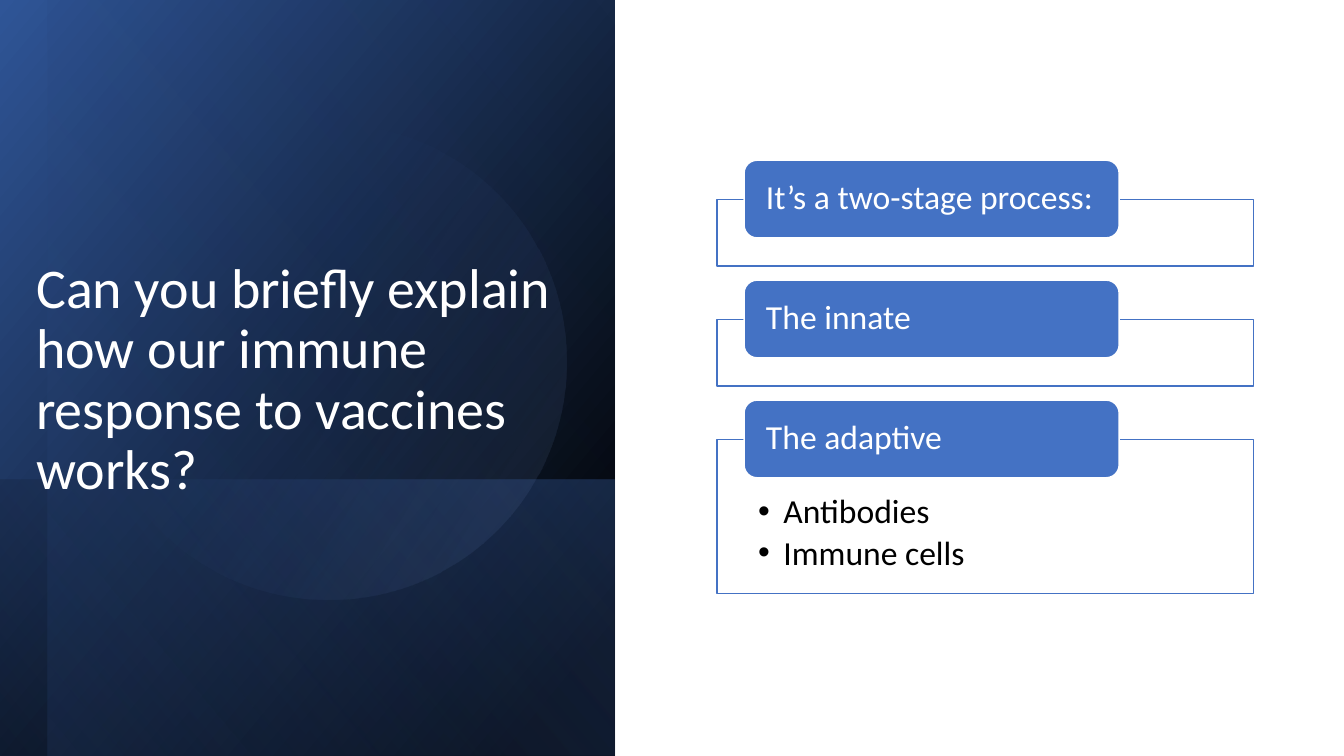
from dataclasses import dataclass

from lxml import etree
from pptx import Presentation
from pptx.dml.color import RGBColor
from pptx.enum.shapes import MSO_SHAPE
from pptx.enum.text import MSO_ANCHOR, MSO_AUTO_SIZE, PP_ALIGN
from pptx.oxml.ns import qn
from pptx.util import Inches, Pt

RECT = MSO_SHAPE.RECTANGLE
OVAL = MSO_SHAPE.OVAL
ROUND = MSO_SHAPE.ROUNDED_RECTANGLE
LEFT = PP_ALIGN.LEFT
TOP, MIDDLE = MSO_ANCHOR.TOP, MSO_ANCHOR.MIDDLE
NO_FIT = MSO_AUTO_SIZE.NONE

Box = tuple[float, float, float, float]


@dataclass(frozen=True)
class Theme:
    font: str = "Calibri"
    title: float = 40
    body: float = 24
    line: float = 1
    blue: str = "4472C4"
    navy: str = "2F5597"
    pale: str = "8FAADC"
    black: str = "000000"
    white: str = "FFFFFF"


THEME = Theme()


@dataclass(frozen=True)
class Stop:
    place: float
    color: str
    alpha: int = 100


@dataclass(frozen=True)
class Panel:
    kind: int
    box: Box
    turn: float
    angle: float
    stops: tuple[Stop, Stop]
    flip: bool = True


@dataclass(frozen=True)
class Stage:
    label: str
    height: float = 0.66
    items: tuple[str, ...] = ()


PANELS = (
    Panel(RECT, (-0.7, 0.7, 7.5, 6.1), 90, 50,
          (Stop(0.08, THEME.black), Stop(1, THEME.navy))),
    Panel(RECT, (1.67, 3.08, 2.74, 6.1), 90, 130,
          (Stop(0.02, THEME.blue, 29), Stop(1, THEME.black, 30))),
    Panel(RECT, (-0.46, 0.93, 7.5, 5.63), 90, 130,
          (Stop(0, THEME.black, 0), Stop(0.99, THEME.blue, 11))),
    Panel(OVAL, (0.9, 1.23, 4.72, 4.72), 101.6, 290,
          (Stop(0.39, THEME.blue, 0), Stop(1, THEME.pale, 15)), flip=False),
)

STAGES = (
    Stage("It’s a two-stage process:"),
    Stage("The innate"),
    Stage("The adaptive", 1.53, ("Antibodies", "Immune cells")),
)
FRAME_X, FRAME_Y, FRAME_W, STEP = 7.11, 1.98, 5.32, 1.19
TAG_X, TAG_W, TAG_H, TAG_RISE = 7.38, 3.72, 0.77, 0.39


def rgb(color: str) -> RGBColor:
    return RGBColor.from_string(color)


def fade(node, alpha: int) -> None:
    """Set the opacity, in percent, of a colour element."""
    etree.SubElement(node, qn("a:alpha")).set("val", str(alpha * 1000))


def add(slide, kind: int, box: Box):
    shape = slide.shapes.add_shape(kind, *map(Inches, box))
    shape.shadow.inherit = False
    return shape


def solid(shape, fill: str, line: str) -> None:
    shape.fill.solid()
    shape.fill.fore_color.rgb = rgb(fill)
    shape.line.color.rgb = rgb(line)
    shape.line.width = Pt(THEME.line)


def place(slide, holder, box: Box) -> None:
    """Move a placeholder to its box, in front of what is drawn so far."""
    holder.left, holder.top, holder.width, holder.height = map(Inches, box)
    slide.shapes._spTree.append(holder._element)


def write(shape, lines: tuple[str, ...], size: float, color: str,
          anchor: int, pad: Box, bullet: bool = False) -> None:
    frame = shape.text_frame
    frame.word_wrap = True
    frame.auto_size = NO_FIT
    frame.vertical_anchor = anchor
    (frame.margin_left, frame.margin_top,
     frame.margin_right, frame.margin_bottom) = map(Inches, pad)
    frame.text = "\n".join(lines)
    for para in frame.paragraphs:
        para.alignment = LEFT
        para.line_spacing = 0.9
        para.space_before = Pt(0)
        if bullet:
            para.space_after = Pt(0.15 * size)
            props = para._p.get_or_add_pPr()
            props.set("marL", str(Inches(0.25)))
            props.set("indent", str(Inches(-0.25)))
            etree.SubElement(props, qn("a:buChar")).set("char", "•")
        para.font.name = THEME.font
        para.font.size = Pt(size)
        para.font.color.rgb = rgb(color)


def draw_panel(slide, panel: Panel) -> None:
    shape = add(slide, panel.kind, panel.box)
    shape.rotation = panel.turn
    shape.line.fill.background()
    shape.fill.gradient()
    shape.fill.gradient_angle = 360 - panel.angle
    for grade, stop in zip(shape.fill.gradient_stops, panel.stops):
        grade.position = stop.place
        grade.color.rgb = rgb(stop.color)
    props = shape._element.spPr
    for node, stop in zip(props.iter(qn("a:srgbClr")), panel.stops):
        fade(node, stop.alpha)
    if panel.flip:
        props.find(qn("a:xfrm")).set("flipH", "1")


def draw_stage(slide, stage: Stage, top: float, body) -> None:
    box = (FRAME_X, top, FRAME_W, stage.height)
    frame = add(slide, RECT, box)
    solid(frame, THEME.white, THEME.blue)
    fade(frame._element.spPr.find(".//" + qn("a:srgbClr")), 90)
    if stage.items:
        place(slide, body, box)
        write(body, stage.items, THEME.body, THEME.black, TOP,
              (0.41, 0.55, 0.41, 0.19), bullet=True)
    tag = add(slide, ROUND, (TAG_X, top - TAG_RISE, TAG_W, TAG_H))
    solid(tag, THEME.blue, THEME.white)
    write(tag, (stage.label,), THEME.body, THEME.white, MIDDLE,
          (0.18, 0.04, 0.18, 0.04))


def main() -> None:
    deck = Presentation()
    deck.slide_width, deck.slide_height = Inches(13.33), Inches(7.5)
    slide = deck.slides.add_slide(deck.slide_layouts[1])
    title, body = slide.placeholders
    for panel in PANELS:
        draw_panel(slide, panel)
    place(slide, title, (0.26, 1.93, 5.41, 3.7))
    write(title, ("Can you briefly explain how our immune response to vaccines works?",),
          THEME.title, THEME.white, MIDDLE, (0.1, 0.05, 0.1, 0.05))
    for row, stage in enumerate(STAGES):
        draw_stage(slide, stage, FRAME_Y + row * STEP, body)
    deck.save("out.pptx")


if __name__ == "__main__":
    main()
